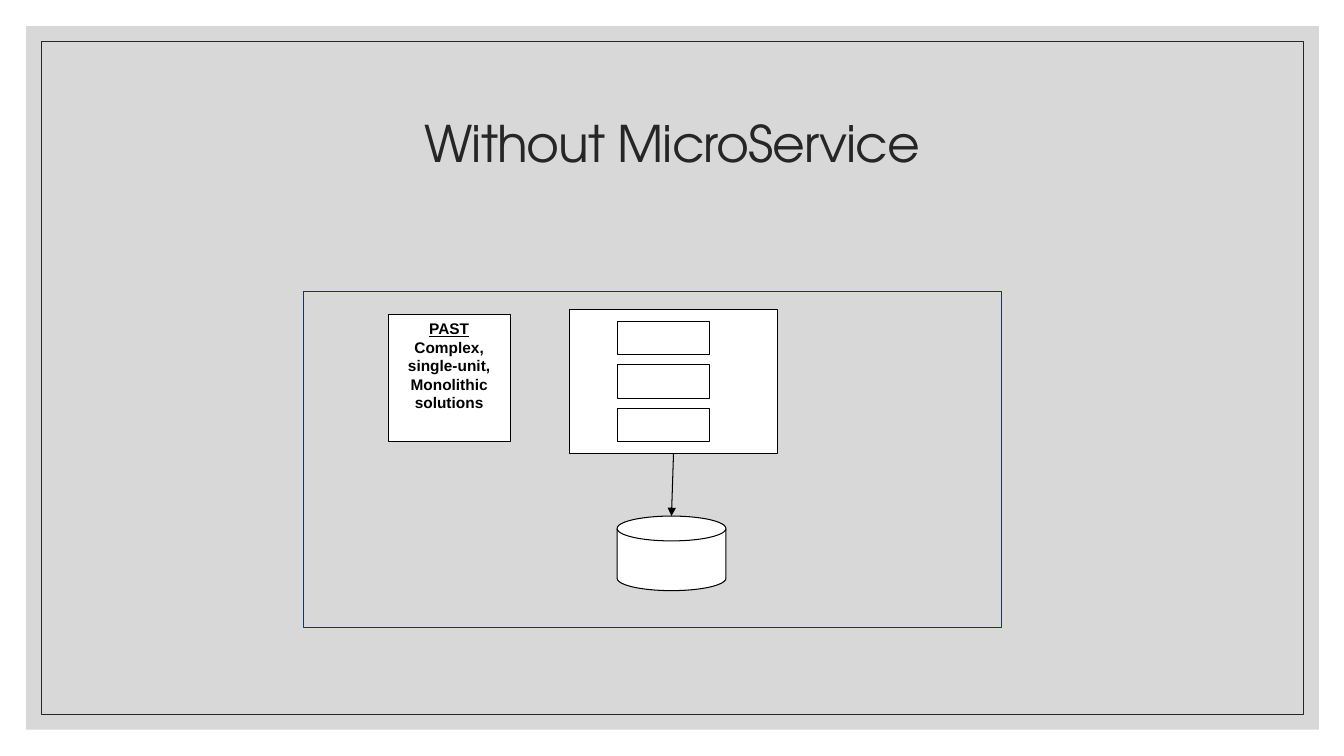
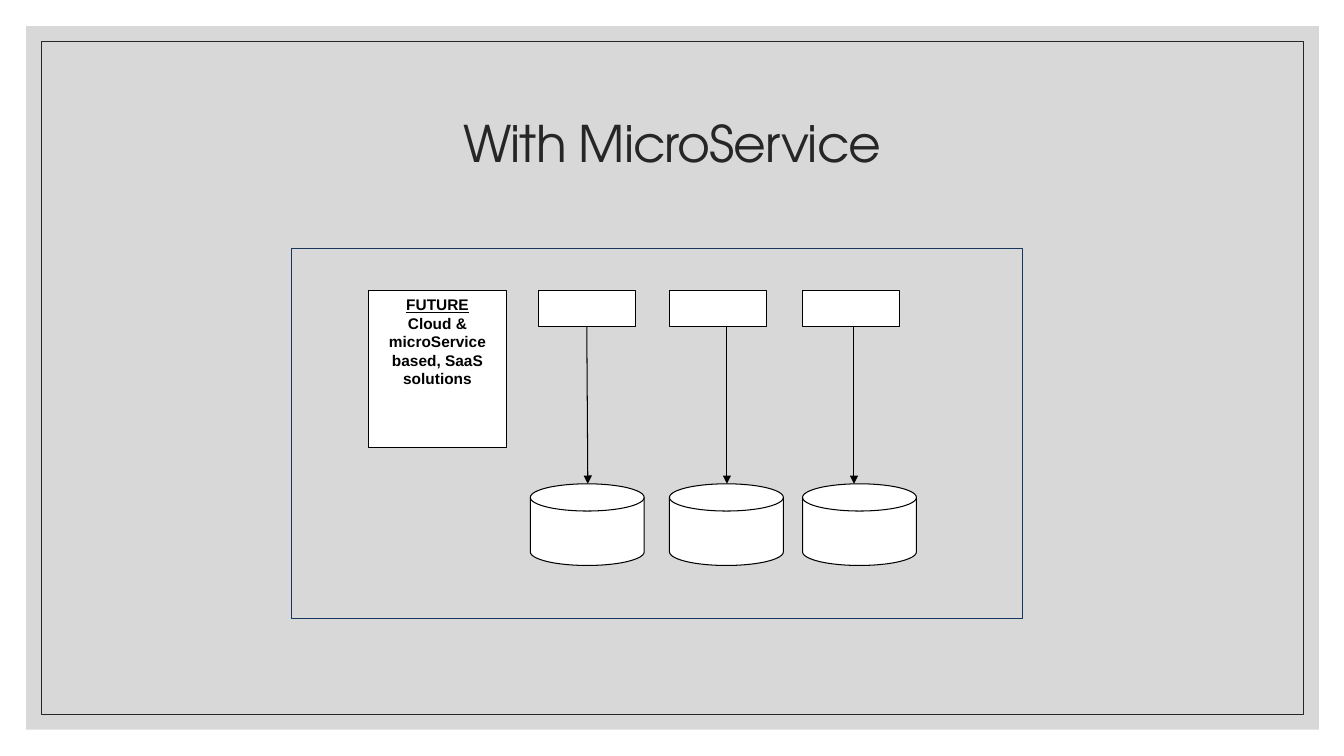
from lxml import etree
from pptx import Presentation
from pptx import util as u
from pptx.dml.color import RGBColor
from pptx.enum import shapes, text
from pptx.oxml import ns

BLACK = RGBColor(0x00, 0x00, 0x00)
WHITE = RGBColor(0xFF, 0xFF, 0xFF)
GREY = RGBColor(0xBF, 0xBF, 0xBF)
CHARCOAL = RGBColor(0x26, 0x26, 0x26)
NAVY = RGBColor(0x17, 0x36, 0x5D)

RECT = shapes.MSO_SHAPE.RECTANGLE
DISK = shapes.MSO_SHAPE.FLOWCHART_MAGNETIC_DISK
COLUMNS, ROWS = 133.3, 75


def sub(parent, tag, **attrs):
    return etree.SubElement(parent, ns.qn(tag), attrs)


class Deck:
    title_font = "TeX Gyre Adventor"
    body_font = "Arial"

    def __init__(self):
        self.prs = Presentation()
        self.prs.slide_width = u.Inches(13.33)
        self.prs.slide_height = u.Inches(7.5)
        self.layout = self.prs.slide_layouts[5]
        self.framed = False

    def x(self, columns):
        return round(self.prs.slide_width * columns / COLUMNS)

    def y(self, rows):
        return round(self.prs.slide_height * rows / ROWS)

    def area(self, left, top, width, height):
        return self.x(left), self.y(top), self.x(width), self.y(height)

    def slide(self, title):
        self.s = self.prs.slides.add_slide(self.layout)
        if not self.framed:
            self.frame()
        sp = self.s.shapes.title
        sp.left, sp.top, sp.width, sp.height = self.area(11.7, 7, 110, 15)
        tf = sp.text_frame
        tf.text = title
        tf.vertical_anchor = text.MSO_ANCHOR.MIDDLE
        p = tf.paragraphs[0]
        p.alignment = text.PP_ALIGN.CENTER
        p.line_spacing = 0.9
        self.font(p, self.title_font, 36, CHARCOAL)
        p.runs[0].font._element.set("spc", "-70")

    def frame(self):
        panel = self.shape(RECT, 2.6, 2.6, 128.2, 69.8, GREY, None)
        colour = panel._element.spPr.find(".//" + ns.qn("a:srgbClr"))
        sub(colour, "a:alpha", val="60000")
        border = self.shape(RECT, 4.1, 4.1, 125.2, 66.8, None, CHARCOAL, 0.5)
        tree = self.layout.shapes._spTree
        for index, sp in enumerate((panel, border), 2):
            tree.insert(index, sp._element)
        self.framed = True

    def font(self, p, name, size, colour):
        p.font.name = name
        p.font.size = u.Pt(size)
        p.font.color.rgb = colour

    def shape(self, kind, left, top, width, height,
              fill=WHITE, line=BLACK, weight=0.75):
        sp = self.s.shapes.add_shape(kind, *self.area(left, top, width, height))
        sp.shadow.inherit = False
        if fill is None:
            sp.fill.background()
        else:
            sp.fill.solid()
            sp.fill.fore_color.rgb = fill
        if line is None:
            sp.line.fill.background()
        else:
            sp.line.color.rgb = line
            sp.line.width = u.Pt(weight)
        return sp

    def outline(self, left, top, width, height):
        return self.shape(RECT, left, top, width, height, None, NAVY)

    def note(self, heading, body, left, top, width, height):
        tf = self.shape(RECT, left, top, width, height).text_frame
        tf.word_wrap = True
        tf.vertical_anchor = text.MSO_ANCHOR.TOP
        tf.text = f"{heading}\n{body}"
        for p in tf.paragraphs:
            p.alignment = text.PP_ALIGN.CENTER
            p.font.bold = True
            self.font(p, self.body_font, 11, BLACK)
        tf.paragraphs[0].runs[0].font.underline = True

    def arrow(self, x1, y1, x2, y2, source=None):
        line = self.s.shapes.add_connector(
            shapes.MSO_CONNECTOR.STRAIGHT,
            self.x(x1), self.y(y1), self.x(x2), self.y(y2))
        if source is not None:
            line.begin_connect(source, 2)
        line.line.color.rgb = BLACK
        line.line.width = u.Pt(0.75)
        sub(line.line._get_or_add_ln(), "a:tailEnd", type="triangle")
        sub(line._element.spPr, "a:effectLst")


def without_microservice(deck):
    deck.slide("Without MicroService")
    deck.outline(30.1, 28.9, 69.2, 33.4)
    monolith = deck.shape(RECT, 56.5, 30.7, 20.6, 14.3, weight=0.5)
    deck.shape(DISK, 61.2, 51.2, 10.8, 7.4)
    for i in range(3):
        deck.shape(RECT, 61.2, 31.9 + 4.3 * i, 9.2, 3.3)
    deck.arrow(66.8, 45, 66.6, 51.2, monolith)
    deck.note("PAST", "Complex, single-unit, Monolithic solutions",
              38.5, 31.2, 12.1, 12.6)


def with_microservice(deck):
    deck.slide("With MicroService")
    deck.outline(28.9, 24.7, 72.5, 36.7)
    deck.note("FUTURE", "Cloud & microService based, SaaS solutions",
              36.6, 28.8, 13.6, 15.6)
    columns = ((53.4, 52.6, 58.3), (66.4, 66.4, 72.1), (79.6, 79.6, 84.7))
    for i, (service_x, store_x, arrow_x) in enumerate(columns):
        service = deck.shape(RECT, service_x, 28.8, 9.6, 3.6)
        deck.shape(DISK, store_x, 48, 11.3, 8.1)
        deck.arrow(arrow_x, 32.4, arrow_x, 48, service if i == 0 else None)


def main():
    deck = Deck()
    without_microservice(deck)
    with_microservice(deck)
    deck.prs.save("out.pptx")


if __name__ == "__main__":
    main()
